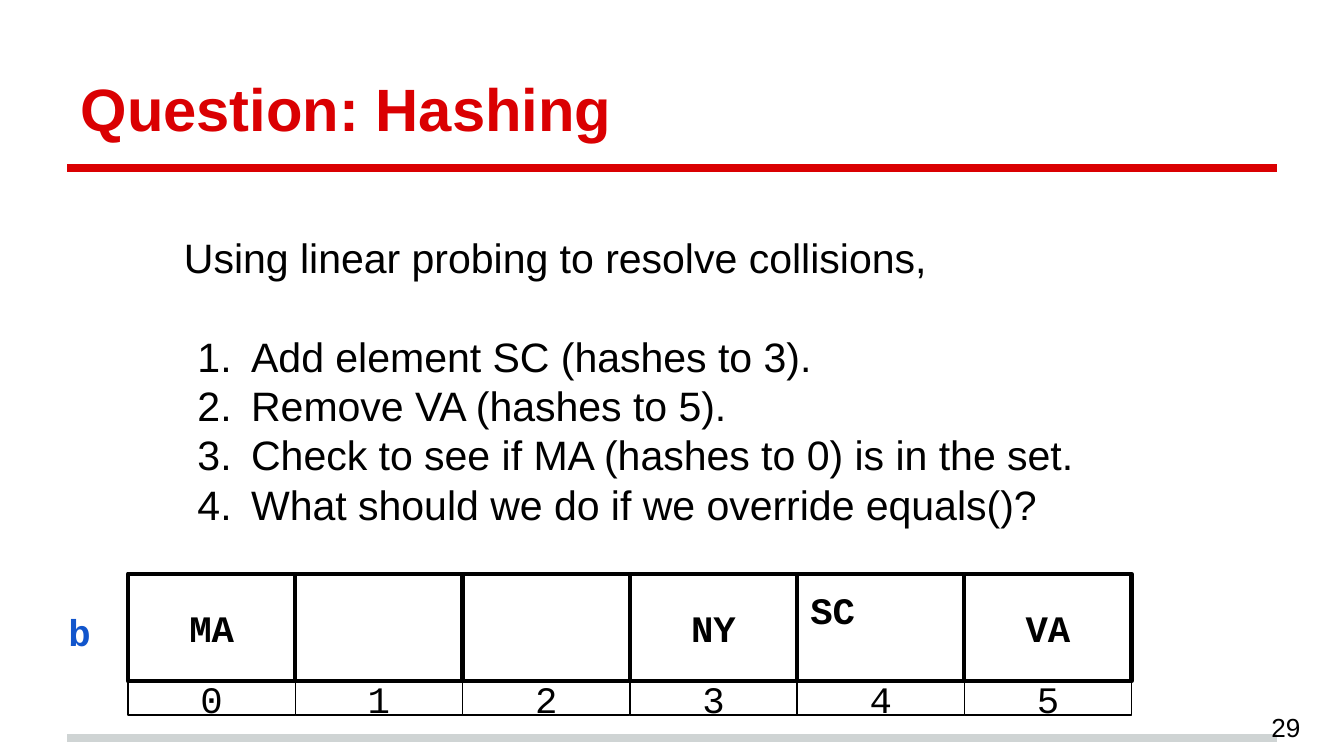
"""Builds a quiz slide on hashing with linear probing."""
import pptx
import pptx.dml.color
import pptx.enum.shapes
import pptx.enum.text
import pptx.oxml
import pptx.oxml.ns
import pptx.util

Pt = pptx.util.Pt
Align = pptx.enum.text.PP_ALIGN
Anchor = pptx.enum.text.MSO_ANCHOR
COLORS = {"red": "DA0002", "gray": "CFD4D4", "black": "000000", "blue": "1155CC"}
SANS, MONO = "Arial", "Courier New"
STEPS = [
    "Add element SC (hashes to 3).",
    "Remove VA (hashes to 5).",
    "Check to see if MA (hashes to 0) is in the set.",
    "What should we do if we override equals()?",
]
BUCKETS = ["MA", "", "", "NY", "SC", "VA"]
GRID_LEFT, GRID_TOP, CELL_WIDTH = 68.6, 307.4, 89.6
BUCKET_HEIGHT, INDEX_HEIGHT = 57.6, 18


def color(name):
    return pptx.dml.color.RGBColor.from_string(COLORS[name])


def write(para, text, size=20, font=MONO, ink="black", bold=False, align=Align.LEFT):
    para.alignment = align
    span = para.add_run()
    span.text = text
    span.font.size = Pt(size)
    span.font.name = font
    span.font.bold = bold
    span.font.color.rgb = color(ink)


def number(para, indent, hanging):
    properties = para._p.get_or_add_pPr()
    properties.set("marL", str(Pt(indent)))
    properties.set("indent", str(-Pt(hanging)))
    bullet = pptx.oxml.parse_xml(
        f'<a:buAutoNum {pptx.oxml.ns.nsdecls("a")} type="arabicPeriod"/>')
    properties.append(bullet)


class Painter:
    """Holds the style and the current slide."""

    inset = 7.2

    def __init__(self, slide):
        self.slide = slide

    def frame(self, shape, anchor=Anchor.TOP):
        frame = shape.text_frame
        frame.word_wrap = True
        frame.auto_size = pptx.enum.text.MSO_AUTO_SIZE.NONE
        frame.vertical_anchor = anchor
        frame.margin_left = frame.margin_right = Pt(self.inset)
        frame.margin_top = frame.margin_bottom = Pt(self.inset)
        return frame

    def title(self, text, left, top, width, height):
        title = self.slide.shapes.title
        title.left, title.top = Pt(left), Pt(top)
        title.width, title.height = Pt(width), Pt(height)
        frame = self.frame(title, Anchor.BOTTOM)
        write(frame.paragraphs[0], text, size=32, font=SANS, ink="red", bold=True)

    def rule(self, left, right, y, ink):
        line = self.slide.shapes.add_connector(
            pptx.enum.shapes.MSO_CONNECTOR.STRAIGHT, Pt(left), Pt(y), Pt(right), Pt(y))
        line.line.color.rgb = color(ink)
        line.line.width = Pt(4)
        effects = pptx.oxml.parse_xml(f'<a:effectLst {pptx.oxml.ns.nsdecls("a")}/>')
        line._element.spPr.append(effects)

    def cell(self, text, left, top, width, height, weight,
             anchor=Anchor.MIDDLE, **style):
        box = self.slide.shapes.add_shape(
            pptx.enum.shapes.MSO_SHAPE.RECTANGLE,
            Pt(left), Pt(top), Pt(width), Pt(height))
        box.shadow.inherit = False
        box.fill.background()
        box.line.color.rgb = color("black")
        box.line.width = Pt(weight)
        frame = self.frame(box, anchor)
        if text:
            write(frame.paragraphs[0], text, **style)

    def text(self, left, top, width, height, anchor=Anchor.TOP):
        box = self.slide.shapes.add_textbox(Pt(left), Pt(top), Pt(width), Pt(height))
        return self.frame(box, anchor)

    def label(self, text, left, top, width, height, anchor=Anchor.TOP, **style):
        frame = self.text(left, top, width, height, anchor)
        write(frame.paragraphs[0], text, **style)

    def question(self, lead, steps, left, top, width, height, pitch=26.4):
        frame = self.text(left, top, width, height)
        para = frame.paragraphs[0]
        para.line_spacing = para.space_after = Pt(pitch)
        write(para, lead, size=22, font=SANS)
        for step in steps:
            para = frame.add_paragraph()
            para.line_spacing = Pt(pitch)
            number(para, indent=36, hanging=28.8)
            write(para, step, size=22, font=SANS)

    def hash_table(self, buckets):
        for index, value in enumerate(buckets):
            left = GRID_LEFT + index * CELL_WIDTH
            added = value == "SC"
            self.cell(value, left, GRID_TOP, CELL_WIDTH, BUCKET_HEIGHT, 2.25,
                      anchor=Anchor.TOP if added else Anchor.MIDDLE, bold=True,
                      align=Align.LEFT if added else Align.CENTER)
            self.cell(str(index), left, GRID_TOP + BUCKET_HEIGHT, CELL_WIDTH,
                      INDEX_HEIGHT, 0.75, align=Align.CENTER)


def main():
    deck = pptx.Presentation()
    deck.slide_width, deck.slide_height = Pt(720), Pt(405)
    painter = Painter(deck.slides.add_slide(deck.slide_layouts[5]))
    painter.rule(36, 684, 395.5, "gray")
    painter.rule(36, 684, 90, "red")
    painter.title("Question: Hashing", 36, 16.5, 648, 67.5)
    painter.hash_table(BUCKETS)
    painter.label("b", 29.5, 319, 36, 38, ink="blue", bold=True)
    painter.question("Using linear probing to resolve collisions,", STEPS,
                     91.5, 117.5, 537, 168.5)
    painter.label("29", 674, 374, 43, 31, anchor=Anchor.MIDDLE, size=14, font=SANS)
    deck.save("out.pptx")


if __name__ == "__main__":
    main()
